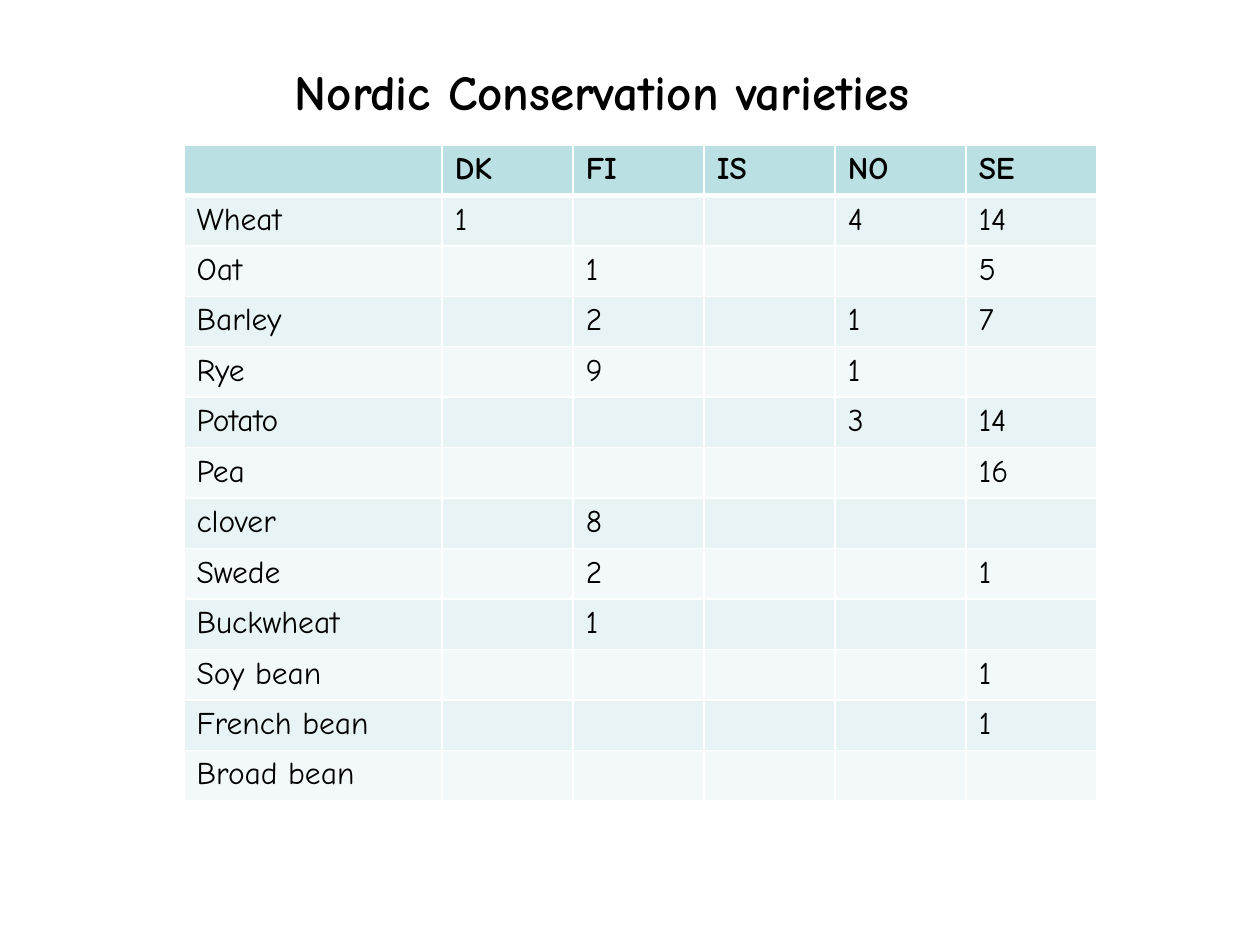
import pptx
import pptx.dml.color
import pptx.enum.text
import pptx.oxml
import pptx.oxml.ns
import pptx.util
from lxml import etree
from pptx.util import Inches

FONT = "Comic Neue"
BODY_SIZE = 18
HEADER_FILL = "BBE0E3"
BAND_FILLS = ("E7F3F4", "F3F9FA")
BORDER_COLOR = "FFFFFF"
COUNTRIES = ("", "DK", "FI", "IS", "NO", "SE")
VARIETIES = (
    ("Wheat", {"DK": 1, "NO": 4, "SE": 14}),
    ("Oat", {"FI": 1, "SE": 5}),
    ("Barley", {"FI": 2, "NO": 1, "SE": 7}),
    ("Rye", {"FI": 9, "NO": 1}),
    ("Potato", {"NO": 3, "SE": 14}),
    ("Pea", {"SE": 16}),
    ("clover", {"FI": 8}),
    ("Swede", {"FI": 2, "SE": 1}),
    ("Buckwheat", {"FI": 1}),
    ("Soy bean", {"SE": 1}),
    ("French bean", {"SE": 1}),
    ("Broad bean", {}),
)


def color(value):
    return pptx.dml.color.RGBColor.from_string(value)


def add_text(paragraph, text, size, bold):
    run = paragraph.add_run()
    run.text = text
    run.font.name = FONT
    run.font.size = pptx.util.Pt(size)
    run.font.bold = bold
    run.font.color.rgb = color("000000")


def set_empty_cell_font(paragraph):
    qn = pptx.oxml.ns.qn
    properties = etree.SubElement(paragraph._p, qn("a:endParaRPr"), sz=str(BODY_SIZE * 100))
    etree.SubElement(properties, qn("a:latin"), typeface=FONT)


def set_borders(cell, bottom_width, top_width):
    properties = cell._tc.get_or_add_tcPr()
    widths = {"lnL": 1, "lnR": 1, "lnT": top_width, "lnB": bottom_width}
    for position, (side, width) in enumerate(widths.items()):
        line = pptx.oxml.parse_xml(
            f'<a:{side} {pptx.oxml.ns.nsdecls("a")} w="{pptx.util.Pt(width)}">'
            f'<a:solidFill><a:srgbClr val="{BORDER_COLOR}"/></a:solidFill></a:{side}>'
        )
        properties.insert(position, line)


def fill_cell(cell, text, row_index):
    is_header = row_index == 0
    cell.fill.solid()
    cell.fill.fore_color.rgb = color(HEADER_FILL if is_header else BAND_FILLS[(row_index - 1) % 2])
    set_borders(cell, 3 if is_header else 1, 3 if row_index == 1 else 1)
    paragraph = cell.text_frame.paragraphs[0]
    if text:
        add_text(paragraph, text, BODY_SIZE, is_header)
    else:
        set_empty_cell_font(paragraph)


def add_varieties_table(slide):
    rows = [COUNTRIES]
    for crop, counts in VARIETIES:
        rows.append((crop, *(str(counts.get(country, "")) for country in COUNTRIES[1:])))
    shape = slide.shapes.add_table(
        len(rows), len(COUNTRIES), Inches(1.46), Inches(1.15), Inches(7.27), Inches(5.2)
    )
    table = shape.table
    for index, column in enumerate(table.columns):
        column.width = Inches(2.05 if index == 0 else 1.04)
    for row_index, texts in enumerate(rows):
        table.rows[row_index].height = Inches(0.27 if row_index == 0 else 0.34)
        for column_index, text in enumerate(texts):
            fill_cell(table.cell(row_index, column_index), text, row_index)
    shape.height = Inches(5.2)


def set_title(slide, text):
    title = slide.shapes.title
    title.left, title.top = Inches(2.24), Inches(0.44)
    title.width, title.height = Inches(6.3), Inches(0.57)
    frame = title.text_frame
    frame.word_wrap = True
    frame.auto_size = pptx.enum.text.MSO_AUTO_SIZE.SHAPE_TO_FIT_TEXT
    frame.vertical_anchor = pptx.enum.text.MSO_ANCHOR.TOP
    paragraph = frame.paragraphs[0]
    paragraph.alignment = pptx.enum.text.PP_ALIGN.LEFT
    add_text(paragraph, text, 28, True)


def main():
    presentation = pptx.Presentation()
    presentation.slide_width = Inches(10)
    presentation.slide_height = Inches(7.5)
    slide = presentation.slides.add_slide(presentation.slide_layouts[5])
    set_title(slide, "Nordic Conservation varieties")
    add_varieties_table(slide)
    presentation.save("out.pptx")


if __name__ == "__main__":
    main()
